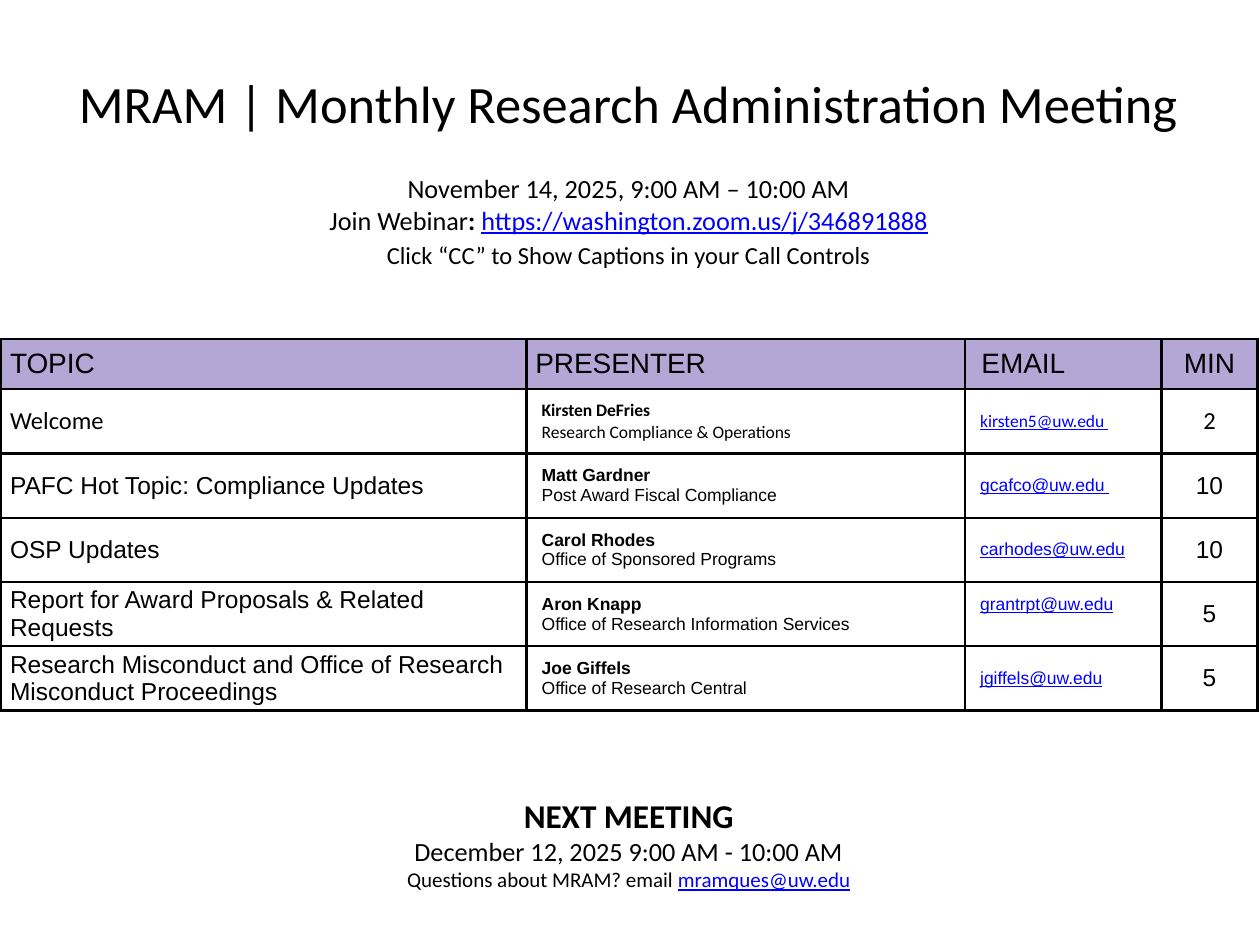
"""Build the monthly research administration meeting agenda slide."""
import dataclasses

import lxml.etree
import pptx
import pptx.dml.color
import pptx.enum.text
import pptx.oxml.ns
import pptx.util

Inches = pptx.util.Inches
Align = pptx.enum.text.PP_ALIGN
Anchor = pptx.enum.text.MSO_ANCHOR


@dataclasses.dataclass(frozen=True)
class Theme:
    ink: str = "000000"
    link: str = "0000FF"
    header: str = "B4A7D6"
    paper: str = "FFFFFF"
    heading_font: str = "Calibri"
    table_font: str = "Arial"
    title: int = 30
    next_heading: int = 19
    header_row: int = 16
    date: int = 15
    body: int = 14
    note: int = 12
    small: int = 10
    border: float = 1.5


@dataclasses.dataclass
class Span:
    text: str
    size: int
    bold: bool = False
    link: bool = False


class AgendaPage:
    def __init__(self, deck, theme):
        self.theme = theme
        self.page = deck.slides.add_slide(deck.slide_layouts[1])

    def add_spans(self, para, spans, font, align=Align.LEFT):
        para.alignment = align
        for span in spans:
            run = para.add_run()
            run.text = span.text
            run.font.name = font
            run.font.size = pptx.util.Pt(span.size)
            run.font.bold = span.bold
            run.font.underline = span.link
            colour = self.theme.link if span.link else self.theme.ink
            run.font.color.rgb = pptx.dml.color.RGBColor.from_string(colour)

    def fill_box(self, box, area, lines):
        box.left, box.top, box.width, box.height = map(Inches, area)
        frame = box.text_frame
        frame.word_wrap = True
        frame.auto_size = pptx.enum.text.MSO_AUTO_SIZE.NONE
        frame.vertical_anchor = Anchor.TOP
        frame.margin_left = frame.margin_right = Inches(0.1)
        frame.margin_top = frame.margin_bottom = Inches(0.1)
        for index, spans in enumerate(lines):
            para = frame.add_paragraph() if index else frame.paragraphs[0]
            properties = para._p.get_or_add_pPr()
            properties.set("marL", "0")
            properties.set("indent", "0")
            lxml.etree.SubElement(properties, pptx.oxml.ns.qn("a:buNone"))
            para.space_before = pptx.util.Pt(0)
            self.add_spans(para, spans, self.theme.heading_font, Align.CENTER)
        return frame

    def title(self, area, text):
        self.fill_box(self.page.shapes.title, area, [[Span(text, self.theme.title)]])

    def body(self, area, lines):
        return self.fill_box(self.page.placeholders[1], area, lines)

    def text_box(self, area, lines):
        box = self.page.shapes.add_textbox(*map(Inches, area))
        self.fill_box(box, area, lines)

    def border(self, cell):
        properties = cell._tc.get_or_add_tcPr()
        qn = pptx.oxml.ns.qn
        for side in ("a:lnL", "a:lnR", "a:lnT", "a:lnB"):
            width = str(int(pptx.util.Pt(self.theme.border)))
            line = lxml.etree.SubElement(properties, qn(side), w=width)
            solid = lxml.etree.SubElement(line, qn("a:solidFill"))
            lxml.etree.SubElement(solid, qn("a:srgbClr"), val=self.theme.ink)

    def cell(self, cell, lines, fill, font, margins, align):
        self.border(cell)
        cell.fill.solid()
        cell.fill.fore_color.rgb = pptx.dml.color.RGBColor.from_string(fill)
        cell.vertical_anchor = Anchor.MIDDLE
        cell.margin_left, cell.margin_right = map(Inches, margins)
        cell.margin_top = cell.margin_bottom = 0
        frame = cell.text_frame
        for index, span in enumerate(lines):
            para = frame.add_paragraph() if index else frame.paragraphs[0]
            self.add_spans(para, [span], font, align)

    def agenda(self, area, widths, heights, headings, rows):
        theme = self.theme
        frame = self.page.shapes.add_table(len(heights), len(widths), *map(Inches, area))
        table = frame.table
        for column, width in zip(table.columns, widths):
            column.width = Inches(width)
        for row, height in zip(table.rows, heights):
            row.height = Inches(height)
        aligns = (Align.LEFT, Align.LEFT, Align.LEFT, Align.CENTER)
        heading_margins = ((0.07, 0.07), (0.07, 0.07), (0.13, 0.07), (0.07, 0.07))
        row_margins = ((0.07, 0.07), (0.12, 0.12), (0.12, 0.12), (0.07, 0.07))
        for column, heading in enumerate(headings):
            self.cell(table.cell(0, column), [Span(heading, theme.header_row)], theme.header,
                      theme.table_font, heading_margins[column], aligns[column])
        for number, (topic, name, office, email, minutes) in enumerate(rows, 1):
            font = theme.heading_font if number == 1 else theme.table_font
            contents = (
                [Span(topic, theme.body)],
                [Span(name, theme.small, bold=True), Span(office, theme.small)],
                [Span(email, theme.small, link=True)],
                [Span(minutes, theme.body)],
            )
            for column, lines in enumerate(contents):
                self.cell(table.cell(number, column), lines, theme.paper, font,
                          row_margins[column], aligns[column])
        return table


def main():
    deck = pptx.Presentation()
    deck.slide_width, deck.slide_height = Inches(10), Inches(7.5)
    theme = Theme()
    page = AgendaPage(deck, theme)

    page.title((0, 0.46, 9.98, 0.82), "MRAM | Monthly Research Administration Meeting")
    details = page.body((0, 1.27, 9.98, 1), [
        [Span("November 14, 2025, 9:00 AM – 10:00 AM", theme.date)],
        [Span("Join Webinar", theme.date), Span(": ", theme.date, bold=True),
         Span("https://washington.zoom.us/j/346891888", theme.date, link=True)],
        [Span("Click “CC” to Show Captions in your Call Controls", theme.body)],
    ])
    details.paragraphs[-1].line_spacing = 1.15

    table = page.agenda(
        (0.01, 2.69, 9.97, 2.95),
        (4.17, 3.48, 1.56, 0.76),
        [0.4] + [0.51] * 5,
        ("TOPIC", "PRESENTER", "EMAIL", "MIN"),
        (
            ("Welcome", "Kirsten DeFries", "Research Compliance & Operations",
             "kirsten5@uw.edu ", "2"),
            ("PAFC Hot Topic: Compliance Updates", "Matt Gardner",
             "Post Award Fiscal Compliance", "gcafco@uw.edu ", "10"),
            ("OSP Updates", "Carol Rhodes", "Office of Sponsored Programs",
             "carhodes@uw.edu", "10"),
            ("Report for Award Proposals & Related Requests", "Aron Knapp",
             "Office of Research Information Services", "grantrpt@uw.edu", "5"),
            ("Research Misconduct and Office of Research Misconduct Proceedings",
             "Joe Giffels", "Office of Research Central", "jgiffels@uw.edu", "5"),
        ),
    )
    table.cell(4, 2).margin_bottom = Inches(0.16)

    page.text_box((0, 6.21, 9.98, 0.88), [
        [Span("NEXT MEETING", theme.next_heading, bold=True)],
        [Span("December 12, 2025 9:00 AM - 10:00 AM", theme.date)],
        [Span("Questions about MRAM? email ", theme.note),
         Span("mramques@uw.edu", theme.note, link=True)],
    ])
    deck.save("out.pptx")


if __name__ == "__main__":
    main()
